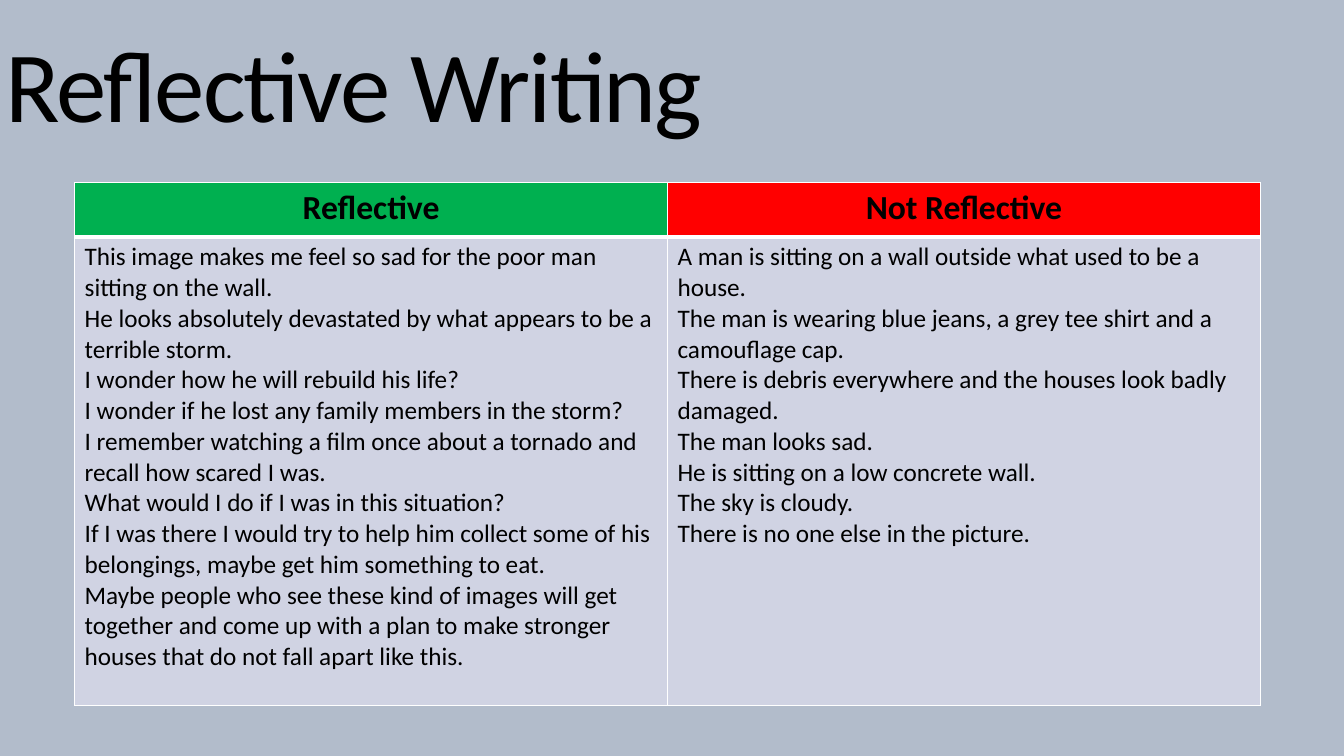
import pptx
import pptx.util
import pptx.enum.text
import pptx.dml.color
import pptx.oxml
import pptx.oxml.ns
from dataclasses import dataclass

Pt = pptx.util.Pt
Inches = pptx.util.Inches
Align = pptx.enum.text.PP_ALIGN
Anchor = pptx.enum.text.MSO_ANCHOR


@dataclass(frozen=True)
class Theme:
    font: str = "Calibri"
    page: str = "B2BCCB"
    ink: str = "000000"
    rule: str = "FFFFFF"
    body: str = "D0D3E3"
    good: str = "00B050"
    bad: str = "FF0000"
    title: int = 72
    head: int = 24
    text: int = 18
    thin: int = 1
    thick: int = 3


THEME = Theme()
WIDE, HIGH = 13.33, 7.5
TITLE = "Reflective Writing"
SIDES = [
    ("Reflective", THEME.good, [
        "This image makes me feel so sad for the poor man sitting on the wall.",
        "He looks absolutely devastated by what appears to be a terrible storm.",
        "I wonder how he will rebuild his life?",
        "I wonder if he lost any family members in the storm?",
        "I remember watching a film once about a tornado and recall how scared I was.",
        "What would I do if I was in this situation?",
        "If I was there I would try to help him collect some of his belongings, maybe get him something to eat.",
        "Maybe people who see these kind of images will get together and come up with a plan to make stronger houses that do not fall apart like this.",
    ]),
    ("Not Reflective", THEME.bad, [
        "A man is sitting on a wall outside what used to be a house.",
        "The man is wearing blue jeans, a grey tee shirt and a camouflage cap.",
        "There is debris everywhere and the houses look badly damaged.",
        "The man looks sad.",
        "He is sitting on a low concrete wall.",
        "The sky is cloudy.",
        "There is no one else in the picture.",
    ]),
]


def apply(item, form):
    for key, value in form.items():
        setattr(item, key, value)


def paint(fill, tint):
    fill.solid()
    fill.fore_color.rgb = pptx.dml.color.RGBColor.from_string(tint)


def write(frame, lines, font, para):
    frame.text = "\n".join(lines)
    for part in frame.paragraphs:
        apply(part, para)
        for run in part.runs:
            apply(run.font, {"name": THEME.font, **font})
            paint(run.font.fill, THEME.ink)


def edge(cell, sizes):
    props = cell._tc.get_or_add_tcPr()
    space = pptx.oxml.ns.nsdecls("a")
    for spot, (side, size) in enumerate(sizes.items()):
        line = pptx.oxml.parse_xml(
            f'<a:ln{side} {space} w="{Pt(size)}"><a:solidFill>'
            f'<a:srgbClr val="{THEME.rule}"/></a:solidFill></a:ln{side}>')
        props.insert(spot, line)


def heading(slide, box):
    title = slide.shapes.title
    apply(title, dict(zip(("left", "top", "width", "height"), box)))
    frame = title.text_frame
    apply(frame, {"word_wrap": True, "vertical_anchor": Anchor.MIDDLE,
                  "margin_left": Inches(0.05), "margin_right": Inches(0.05)})
    write(frame, [TITLE], {"size": Pt(THEME.title)},
          {"alignment": Align.LEFT, "line_spacing": 0.85})
    for run in frame.paragraphs[0].runs:
        run.font._element.set("spc", "-120")


def compare(slide, box):
    left, top, width, height = box
    table = slide.shapes.add_table(2, len(SIDES), *box).table
    first = Inches(0.54)
    for row, size in zip(table.rows, (first, height - first)):
        row.height = size
    for spot, (name, tint, lines) in enumerate(SIDES):
        table.columns[spot].width = width // len(SIDES)
        head, body = table.cell(0, spot), table.cell(1, spot)
        write(head.text_frame, [name], {"size": Pt(THEME.head), "bold": True},
              {"alignment": Align.CENTER})
        write(body.text_frame, lines, {"size": Pt(THEME.text), "bold": False},
              {"alignment": Align.LEFT})
        paint(head.fill, tint)
        paint(body.fill, THEME.body)
        thin = dict.fromkeys("LRTB", THEME.thin)
        edge(head, {**thin, "B": THEME.thick})
        edge(body, {**thin, "T": THEME.thick})


def main():
    deck = pptx.Presentation()
    apply(deck, {"slide_width": Inches(WIDE), "slide_height": Inches(HIGH)})
    slide = deck.slides.add_slide(deck.slide_layouts[5])
    paint(slide.background.fill, THEME.page)
    heading(slide, [Inches(n) for n in (0, 0, 11.78, 1.81)])
    compare(slide, [Inches(n) for n in (0.74, 1.81, 11.76, 5.19)])
    deck.save("out.pptx")


if __name__ == "__main__":
    main()
